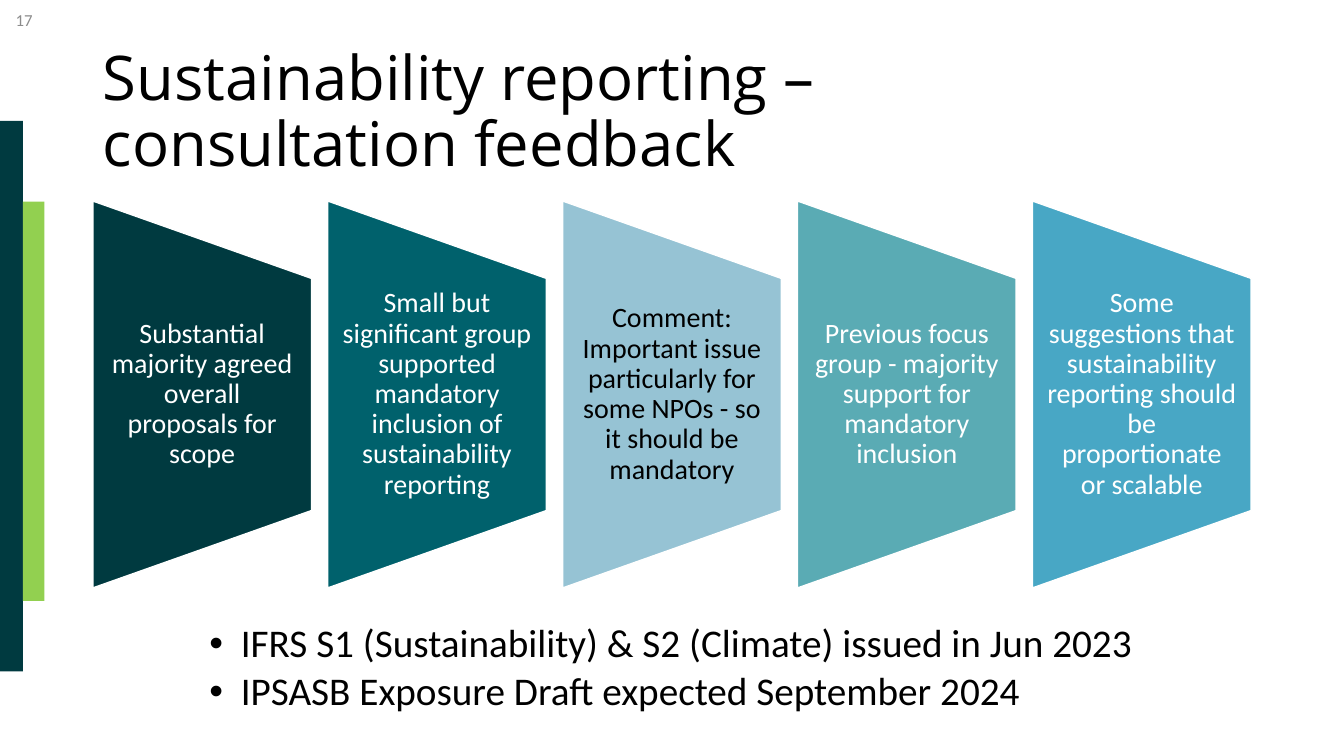
from typing import NamedTuple

from lxml.etree import SubElement
from pptx import Presentation
from pptx.dml.color import RGBColor
from pptx.enum.shapes import MSO_SHAPE as Shape
from pptx.enum.text import MSO_ANCHOR as Anchor, PP_ALIGN as Align
from pptx.oxml.ns import qn
from pptx.util import Cm, Pt

COLORS = {
    "dark": "003A40", "lime": "92D050", "teal": "00616C", "pale": "96C3D4",
    "sea": "5AABB4", "sky": "48A7C5", "white": "FFFFFF", "black": "000000",
    "grey": "8C8C8C",
}


class Box(NamedTuple):
    left: float
    top: float
    width: float
    height: float


class Bar(NamedTuple):
    box: Box
    color: str


class Panel(NamedTuple):
    text: str
    fill: str
    color: str = "white"


BARS = [Bar(Box(0, 3.05, 0.58, 13.87), "dark"),
        Bar(Box(0.58, 5.08, 0.54, 10.06), "lime")]
PANELS = [
    Panel("Substantial majority agreed overall proposals for scope", "dark"),
    Panel("Small but significant group supported mandatory inclusion of "
          "sustainability reporting", "teal"),
    Panel("Comment: Important issue particularly for some NPOs - so it should "
          "be mandatory", "pale", "black"),
    Panel("Previous focus group - majority support for mandatory inclusion", "sea"),
    Panel("Some suggestions that sustainability reporting should be "
          "proportionate or scalable", "sky"),
]
BULLETS = ["IFRS S1 (Sustainability) & S2 (Climate) issued in Jun 2023",
           "IPSASB Exposure Draft expected September 2024"]

PANEL_LEFT, PANEL_PITCH = 2.34, 5.92
PANEL_WIDTH, PANEL_HEIGHT = 5.51, 9.75
PANEL_MIDDLE = 9.94
PANEL_TEXT_HEIGHT = 5.84


def rgb(name: str) -> RGBColor:
    return RGBColor.from_string(COLORS[name])


def place(box: Box) -> list[Cm]:
    return [Cm(v) for v in box]


def add_filled(slide, kind: Shape, box: Box, color: str):
    sp = slide.shapes.add_shape(kind, *place(box))
    sp.shadow.inherit = False
    sp.fill.solid()
    sp.fill.fore_color.rgb = rgb(color)
    sp.line.fill.background()
    return sp


def format_text(tf, size: float, color: str, font: str = "Calibri",
                align: Align = Align.LEFT, spacing: float = 0.9,
                after: float = 0) -> None:
    tf.word_wrap = True
    tf.vertical_anchor = Anchor.MIDDLE
    for p in tf.paragraphs:
        p.alignment = align
        p.line_spacing = spacing
        p.space_after = Pt(after)
        for r in p.runs:
            r.font.name = font
            r.font.size = Pt(size)
            r.font.color.rgb = rgb(color)


def add_text(slide, box: Box, text: str, margins: Box):
    tf = slide.shapes.add_textbox(*place(box)).text_frame
    tf.text = text
    (tf.margin_left, tf.margin_top,
     tf.margin_right, tf.margin_bottom) = place(margins)
    return tf


def add_panel(slide, left: float, panel: Panel) -> None:
    # The shape is turned a quarter, so its width runs down the slide
    center = left + PANEL_WIDTH / 2
    box = Box(center - PANEL_HEIGHT / 2, PANEL_MIDDLE - PANEL_WIDTH / 2,
              PANEL_HEIGHT, PANEL_WIDTH)
    sp = add_filled(slide, Shape.FLOWCHART_MANUAL_OPERATION, box, panel.fill)
    sp.rotation = 270
    sp.line.color.rgb = rgb("white")
    sp.line.width = Pt(1)
    text_box = Box(left, PANEL_MIDDLE - PANEL_TEXT_HEIGHT / 2,
                   PANEL_WIDTH, PANEL_TEXT_HEIGHT)
    tf = add_text(slide, text_box, panel.text, Box(0.36, 0, 0.36, 0))
    format_text(tf, 20, panel.color, align=Align.CENTER, after=7)


def add_bullets(tf, indent: float) -> None:
    for p in tf.paragraphs:
        pPr = p._p.get_or_add_pPr()
        pPr.set("marL", str(Cm(indent)))
        pPr.set("indent", str(-Cm(indent)))
        SubElement(pPr, qn("a:buFont"), typeface="Arial")
        SubElement(pPr, qn("a:buChar"), char="•")


def main() -> None:
    prs = Presentation()
    prs.slide_width, prs.slide_height = Cm(33.87), Cm(19.05)
    slide = prs.slides.add_slide(prs.slide_layouts[5])

    # Side bars
    for bar in BARS:
        add_filled(slide, Shape.RECTANGLE, bar.box, bar.color)

    # Title
    title = slide.shapes.title
    title.left, title.top, title.width, title.height = place(
        Box(2.34, 1.02, 21.95, 3.68))
    title.text_frame.text = "Sustainability reporting – consultation feedback"
    format_text(title.text_frame, 44, "black", "Open Sans")

    # Slide number
    number = add_text(slide, Box(0, 0, 1.07, 1.02), "17",
                      Box(0.25, 0.13, 0.25, 0.13))
    format_text(number, 12, "grey", align=Align.RIGHT, spacing=1.0)

    # Feedback panels
    for i, panel in enumerate(PANELS):
        add_panel(slide, PANEL_LEFT + i * PANEL_PITCH, panel)

    # Next steps
    steps = add_text(slide, Box(4.72, 14.83, 25.93, 4.06), "\n".join(BULLETS),
                     Box(0.56, 0.05, 0.05, 0.05))
    add_bullets(steps, 0.79)
    format_text(steps, 28, "black", after=4.2)

    prs.save("out.pptx")


if __name__ == "__main__":
    main()
